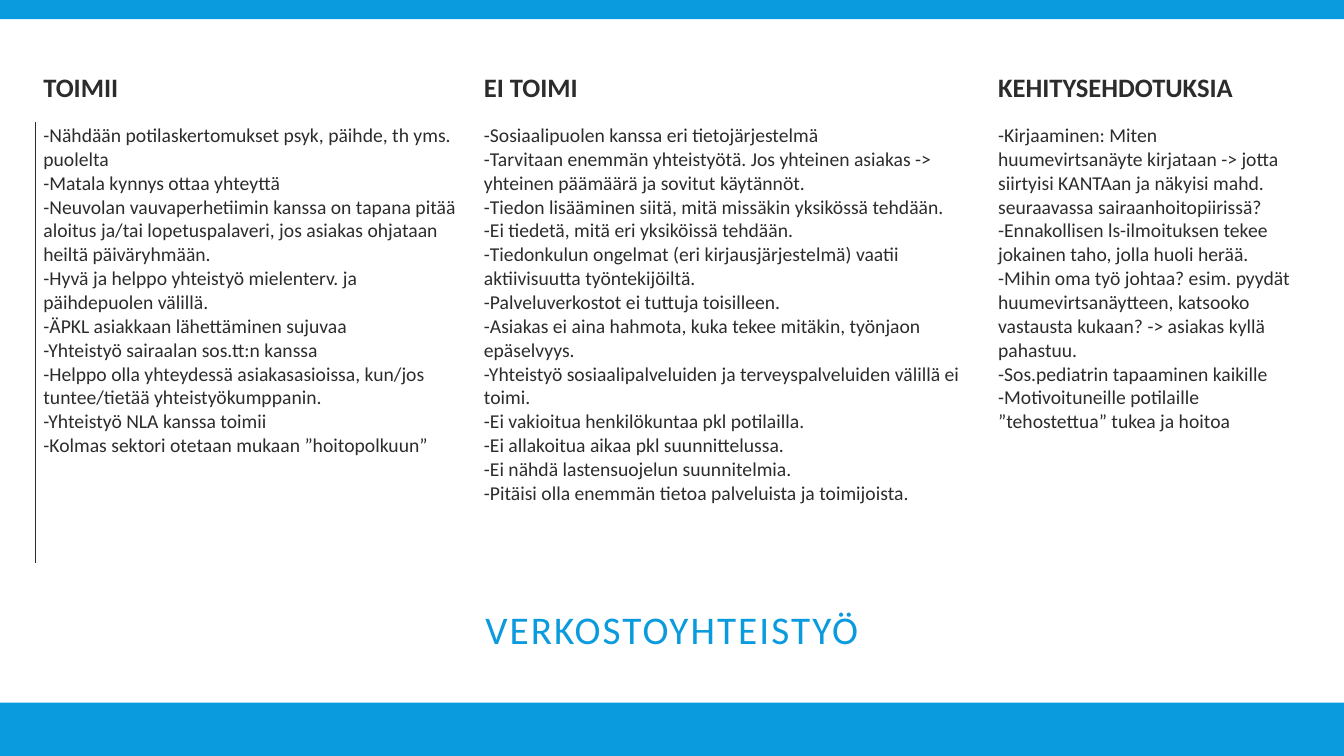
from dataclasses import dataclass

from lxml import etree
from pptx import Presentation
from pptx import util as u
from pptx.dml.color import RGBColor
from pptx.enum import shapes, text
from pptx.oxml.ns import qn

WIDTH, HEIGHT = u.Inches(13.33), u.Inches(7.5)
PLAIN_STYLE = "{2D5ABB26-0587-4C30-8999-92F81FD0307C}"


@dataclass(frozen=True)
class Theme:
    accent: RGBColor = RGBColor(0x09, 0x9B, 0xDD)
    ink: RGBColor = RGBColor(0x2C, 0x2C, 0x2C)
    paper: RGBColor = RGBColor(0xFF, 0xFF, 0xFF)
    font: str = "Calibri"
    title: int = 28
    heading: int = 19
    body: int = 14


@dataclass(frozen=True)
class Band:
    top: float
    height: float


@dataclass(frozen=True)
class Topic:
    heading: str
    width: float
    points: tuple[str, ...]


THEME = Theme()
BANDS = (Band(0, 2.53), Band(92.93, 7.07))
TABLE_LEFT, TABLE_TOP = 2.63, 8.8
ROW_HEIGHTS = (7.33, 58.4)
TITLE_MARGIN, TITLE_TOP, TITLE_HEIGHT = 5.25, 77.33, 9.6

TOPICS = (
    Topic("TOIMII", 32.78, (
        "-Nähdään potilaskertomukset psyk, päihde, th yms. puolelta",
        "-Matala kynnys ottaa yhteyttä",
        "-Neuvolan vauvaperhetiimin kanssa on tapana pitää aloitus ja/tai "
        "lopetuspalaveri, jos asiakas ohjataan heiltä päiväryhmään.",
        "-Hyvä ja helppo yhteistyö mielenterv. ja päihdepuolen välillä.",
        "-ÄPKL asiakkaan lähettäminen sujuvaa",
        "-Yhteistyö sairaalan sos.tt:n kanssa",
        "-Helppo olla yhteydessä asiakasasioissa, kun/jos tuntee/tietää "
        "yhteistyökumppanin.",
        "-Yhteistyö NLA kanssa toimii",
        "-Kolmas sektori otetaan mukaan ”hoitopolkuun”",
    )),
    Topic("EI TOIMI", 38.26, (
        "-Sosiaalipuolen kanssa eri tietojärjestelmä",
        "-Tarvitaan enemmän yhteistyötä. Jos yhteinen asiakas -> yhteinen "
        "päämäärä ja sovitut käytännöt.",
        "-Tiedon lisääminen siitä, mitä missäkin yksikössä tehdään.",
        "-Ei tiedetä, mitä eri yksiköissä tehdään.",
        "-Tiedonkulun ongelmat (eri kirjausjärjestelmä) vaatii "
        "aktiivisuutta työntekijöiltä.",
        "-Palveluverkostot ei tuttuja toisilleen.",
        "-Asiakas ei aina hahmota, kuka tekee mitäkin, työnjaon epäselvyys.",
        "-Yhteistyö sosiaalipalveluiden ja terveyspalveluiden välillä ei "
        "toimi.",
        "-Ei vakioitua henkilökuntaa pkl potilailla.",
        "-Ei allakoitua aikaa pkl suunnittelussa.",
        "-Ei nähdä lastensuojelun suunnitelmia.",
        "-Pitäisi olla enemmän tietoa palveluista ja toimijoista.",
    )),
    Topic("KEHITYSEHDOTUKSIA", 23.71, (
        "-Kirjaaminen: Miten huumevirtsanäyte kirjataan -> jotta siirtyisi "
        "KANTAan ja näkyisi mahd. seuraavassa sairaanhoitopiirissä?",
        "-Ennakollisen ls-ilmoituksen tekee jokainen taho, jolla huoli herää.",
        "-Mihin oma työ johtaa? esim. pyydät huumevirtsanäytteen, katsooko "
        "vastausta kukaan? -> asiakas kyllä pahastuu.",
        "-Sos.pediatrin tapaaminen kaikille",
        "-Motivoituneille potilaille ”tehostettua” tukea ja hoitoa",
    )),
)


def across(percent: float) -> int:
    return round(WIDTH * percent / 100)


def down(percent: float) -> int:
    return round(HEIGHT * percent / 100)


def style_font(font, size: int, color: RGBColor, bold: bool = False) -> None:
    font.name = THEME.font
    font.size = u.Pt(size)
    font.bold = bold
    font.color.rgb = color


def write_title(slide, wording: str) -> None:
    title = slide.shapes.title
    title.left, title.top = across(TITLE_MARGIN), down(TITLE_TOP)
    title.width = across(100 - 2 * TITLE_MARGIN)
    title.height = down(TITLE_HEIGHT)
    frame = title.text_frame
    frame.text = wording
    frame.word_wrap = True
    frame.auto_size = text.MSO_AUTO_SIZE.NONE
    frame.vertical_anchor = text.MSO_ANCHOR.BOTTOM
    paragraph = frame.paragraphs[0]
    paragraph.alignment = text.PP_ALIGN.CENTER
    paragraph.line_spacing = 0.8
    style_font(paragraph.font, THEME.title, THEME.accent)
    paragraph.runs[0].font._element.set("spc", "150")


def draw_band(slide, band: Band) -> None:
    bar = slide.shapes.add_shape(
        shapes.MSO_SHAPE.RECTANGLE, 0, down(band.top), WIDTH, down(band.height))
    bar.shadow.inherit = False
    bar.fill.solid()
    bar.fill.fore_color.rgb = THEME.accent
    bar.line.fill.background()


def fill_cell(cell, lines: tuple[str, ...], size: int, bold: bool) -> None:
    cell.fill.background()
    cell.margin_left = cell.margin_right = u.Inches(0.08)
    cell.margin_top, cell.margin_bottom = u.Inches(0.02), u.Inches(0.17)
    cell.text = "\n".join(lines)
    for paragraph in cell.text_frame.paragraphs:
        style_font(paragraph.font, size, THEME.ink, bold)


def rule_left(cell) -> None:
    properties = cell._tc.get_or_add_tcPr()
    rule = etree.Element(qn("a:lnL"), w=str(u.Pt(0.75)))
    solid = etree.SubElement(rule, qn("a:solidFill"))
    etree.SubElement(solid, qn("a:srgbClr"), val=str(THEME.ink))
    properties.insert(0, rule)


def draw_table(slide, topics: tuple[Topic, ...]) -> None:
    table = slide.shapes.add_table(
        len(ROW_HEIGHTS), len(topics), across(TABLE_LEFT), down(TABLE_TOP),
        across(sum(topic.width for topic in topics)),
        down(sum(ROW_HEIGHTS))).table
    table.first_row = table.horz_banding = False
    table._tbl.tblPr.find(qn("a:tableStyleId")).text = PLAIN_STYLE
    for row, height in zip(table.rows, ROW_HEIGHTS):
        row.height = down(height)
    for index, topic in enumerate(topics):
        table.columns[index].width = across(topic.width)
        heading, body = table.cell(0, index), table.cell(1, index)
        fill_cell(heading, (topic.heading,), THEME.heading, True)
        heading.vertical_anchor = text.MSO_ANCHOR.BOTTOM
        fill_cell(body, topic.points, THEME.body, False)
    rule_left(table.cell(1, 0))


def main() -> None:
    deck = Presentation()
    deck.slide_width, deck.slide_height = WIDTH, HEIGHT
    slide = deck.slides.add_slide(deck.slide_layouts.get_by_name("Title Only"))
    slide.background.fill.solid()
    slide.background.fill.fore_color.rgb = THEME.paper
    write_title(slide, "VERKOSTOYHTEISTYÖ")
    for band in BANDS:
        draw_band(slide, band)
    draw_table(slide, TOPICS)
    deck.save("out.pptx")


if __name__ == "__main__":
    main()
